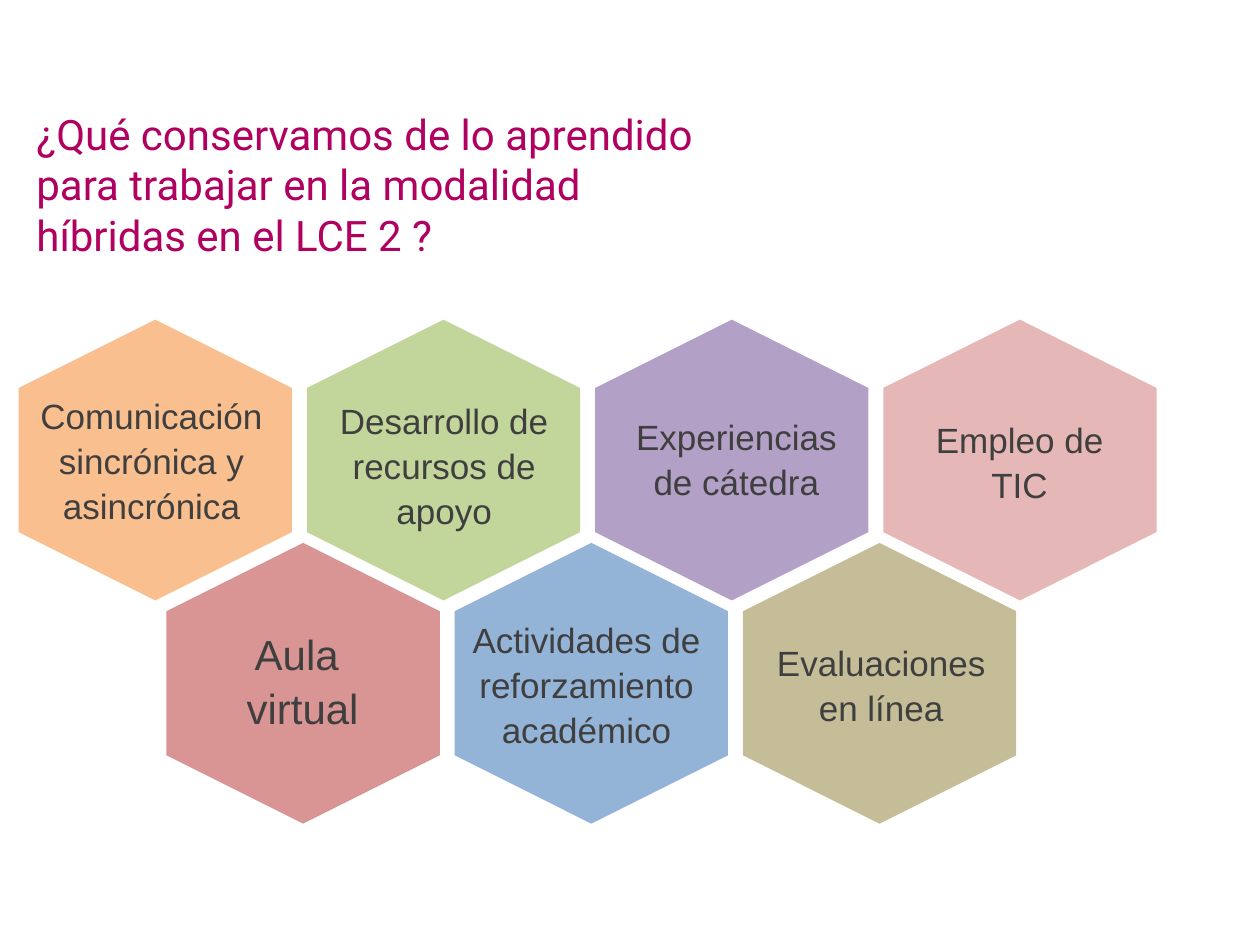
from dataclasses import dataclass

from pptx import Presentation
from pptx.dml.color import RGBColor
from pptx.enum.shapes import MSO_SHAPE
from pptx.enum.text import MSO_ANCHOR, MSO_AUTO_SIZE, PP_ALIGN
from pptx.util import Cm, Pt

MAGENTA = RGBColor(0xB0, 0x01, 0x61)
DARK_GREY = RGBColor(0x3F, 0x3F, 0x3F)
ORANGE = RGBColor(0xFA, 0xBF, 0x8E)
GREEN = RGBColor(0xC2, 0xD5, 0x9B)
PURPLE = RGBColor(0xB2, 0xA0, 0xC7)
PINK = RGBColor(0xE5, 0xB8, 0xB7)
RED = RGBColor(0xD9, 0x95, 0x93)
BLUE = RGBColor(0x93, 0xB3, 0xD7)
KHAKI = RGBColor(0xC4, 0xBD, 0x97)

# Honeycomb geometry, in centimetres (before the quarter turn)
HEXAGON_WIDTH, HEXAGON_HEIGHT = 5.66, 5.51
PITCH = 5.81
ROW_ORIGINS = [(0.3, 6.52), (3.28, 11.02)]


@dataclass
class Cell:
    row: int
    column: int
    color: RGBColor
    text: str
    left: float  # label box
    top: float
    width: float = 5.51
    height: float = 2.03
    size: int = 20


CELLS = [
    Cell(0, 0, ORANGE, "Comunicación sincrónica y asincrónica", 0.3, 7.77, height=2.95),
    Cell(0, 1, GREEN, "Desarrollo de recursos de apoyo", 6.2, 7.87, height=2.95),
    Cell(0, 2, PURPLE, "Experiencias de cátedra", 12.09, 8.2),
    Cell(0, 3, PINK, "Empleo de TIC", 18.36, 8.26, width=4.39),
    Cell(1, 0, RED, "Aula \nvirtual", 3.71, 12.47, width=4.78, height=2.39, size=24),
    Cell(1, 1, BLUE, "Actividades de reforzamiento académico", 9.07, 12.29, height=2.95),
    Cell(1, 2, KHAKI, "Evaluaciones en línea", 15.01, 12.75),
]


def set_attributes(target, values: dict) -> None:
    for name, value in values.items():
        setattr(target, name, value)


def format_text(frame, font: dict, color: RGBColor, paragraph_format: dict) -> None:
    set_attributes(frame, {"word_wrap": True, "vertical_anchor": MSO_ANCHOR.TOP,
                           "auto_size": MSO_AUTO_SIZE.SHAPE_TO_FIT_TEXT})
    for paragraph in frame.paragraphs:
        set_attributes(paragraph, paragraph_format)
        for run in paragraph.runs:
            set_attributes(run.font, font)
            run.font.color.rgb = color


def add_title(slide) -> None:
    title = slide.shapes.title
    set_attributes(title, {"left": Cm(0.48), "top": Cm(2.06),
                           "width": Cm(14.4), "height": Cm(3.33)})
    title.text_frame.text = ("¿Qué conservamos de lo aprendido para trabajar "
                             "en la modalidad híbridas en el LCE 2 ?")
    format_text(title.text_frame, {"name": "Roboto", "size": Pt(24)}, MAGENTA,
                {"alignment": PP_ALIGN.LEFT})


def add_hexagon(slide, cell: Cell) -> None:
    left, top = ROW_ORIGINS[cell.row]
    shape = slide.shapes.add_shape(
        MSO_SHAPE.HEXAGON, Cm(left + cell.column * PITCH), Cm(top),
        Cm(HEXAGON_WIDTH), Cm(HEXAGON_HEIGHT))
    shape.rotation = 90
    shape.adjustments[0] = 0.25
    shape.shadow.inherit = False
    shape.fill.solid()
    shape.fill.fore_color.rgb = cell.color
    shape.line.fill.background()


def add_label(slide, cell: Cell) -> None:
    box = slide.shapes.add_textbox(Cm(cell.left), Cm(cell.top),
                                   Cm(cell.width), Cm(cell.height))
    box.text_frame.text = cell.text
    format_text(box.text_frame, {"name": "Arial", "size": Pt(cell.size)}, DARK_GREY,
                {"alignment": PP_ALIGN.CENTER, "line_spacing": 1.07})


def main() -> None:
    presentation = Presentation()
    presentation.slide_width, presentation.slide_height = Cm(25.4), Cm(19.05)
    slide = presentation.slides.add_slide(presentation.slide_layouts[5])

    add_title(slide)
    # Hexagons first, so that every label stays on top
    for cell in CELLS:
        add_hexagon(slide, cell)
    for cell in CELLS:
        add_label(slide, cell)

    presentation.save("out.pptx")


if __name__ == "__main__":
    main()
